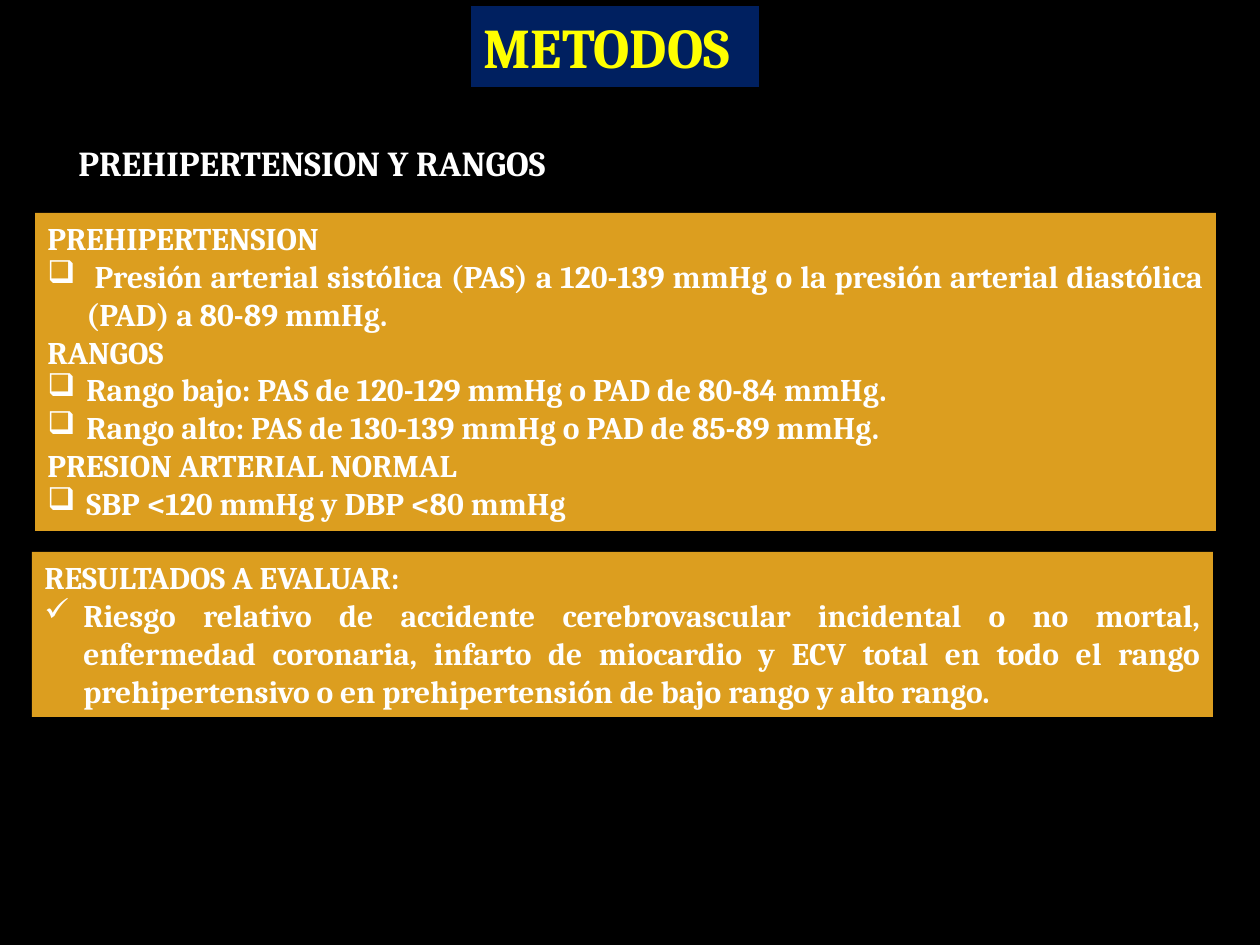
"""Build the METODOS slide on prehypertension ranges and outcomes."""
from lxml.etree import SubElement
from pptx import Presentation
from pptx.dml.color import RGBColor
from pptx.enum.text import MSO_ANCHOR, MSO_AUTO_SIZE, PP_ALIGN
from pptx.oxml.ns import qn
from pptx.util import Emu, Pt

SCALE = 914400 / 126
FONT = "Cambria"
BLACK, WHITE, YELLOW, NAVY, GOLD = "000000", "FFFFFF", "FFFF00", "002060", "DC9E1F"
INDENT = 39

TITLE = "METODOS"
TITLE_BOX = (471, 6, 288, 81)
SUBTITLE = "PREHIPERTENSION Y RANGOS"
SUBTITLE_BOX = (66, 135, 673, 55)
PANELS = [
    ((35, 213, 1181, 318), "❑", [
        ("PREHIPERTENSION", [
            " Presión arterial sistólica (PAS) a 120-139 mmHg o la presión arterial "
            "diastólica (PAD) a 80-89 mmHg."]),
        ("RANGOS", [
            "Rango bajo: PAS de 120-129 mmHg o PAD de 80-84 mmHg.",
            "Rango alto: PAS de 130-139 mmHg o PAD de 85-89 mmHg."]),
        ("PRESION ARTERIAL NORMAL", ["SBP <120 mmHg y DBP <80 mmHg"]),
    ]),
    ((32, 552, 1181, 165), "✓", [
        ("RESULTADOS A EVALUAR:", [
            "Riesgo relativo de accidente cerebrovascular incidental o no mortal, "
            "enfermedad coronaria, infarto de miocardio y ECV total en todo el rango "
            "prehipertensivo o en prehipertensión de bajo rango y alto rango."]),
    ]),
]


def px(value):
    return Emu(round(value * SCALE))


def color(value):
    return RGBColor.from_string(value)


def add_bullet(paragraph, character):
    properties = paragraph._p.get_or_add_pPr()
    properties.set("marL", str(px(INDENT)))
    properties.set("indent", str(px(-INDENT)))
    SubElement(properties, qn("a:buChar")).set("char", character)


def write(shape, lines, box, fill, size, ink=WHITE, align=PP_ALIGN.LEFT):
    shape.left, shape.top, shape.width, shape.height = map(px, box)
    shape.fill.solid()
    shape.fill.fore_color.rgb = color(fill)
    frame = shape.text_frame
    frame.word_wrap = True
    frame.auto_size = MSO_AUTO_SIZE.NONE
    frame.vertical_anchor = MSO_ANCHOR.TOP
    for index, (text, bullet) in enumerate(lines):
        paragraph = frame.add_paragraph() if index else frame.paragraphs[0]
        paragraph.alignment = align
        if bullet:
            add_bullet(paragraph, bullet)
        run = paragraph.add_run()
        run.text = text
        run.font.name = FONT
        run.font.size = Pt(size)
        run.font.bold = True
        run.font.color.rgb = color(ink)


def main():
    presentation = Presentation()
    presentation.slide_width, presentation.slide_height = px(1260), px(945)
    slide = presentation.slides.add_slide(presentation.slide_layouts[5])
    slide.background.fill.solid()
    slide.background.fill.fore_color.rgb = color(BLACK)

    write(slide.shapes.title, [(TITLE, None)], TITLE_BOX, NAVY, 32, ink=YELLOW)
    subtitle = slide.shapes.add_textbox(0, 0, 0, 0)
    write(subtitle, [(SUBTITLE, None)], SUBTITLE_BOX, BLACK, 20)
    for box, bullet, sections in PANELS:
        lines = []
        for heading, items in sections:
            lines.append((heading, None))
            lines.extend((item, bullet) for item in items)
        panel = slide.shapes.add_textbox(0, 0, 0, 0)
        write(panel, lines, box, GOLD, 18, align=PP_ALIGN.JUSTIFY)
    presentation.save("out.pptx")


if __name__ == "__main__":
    main()
